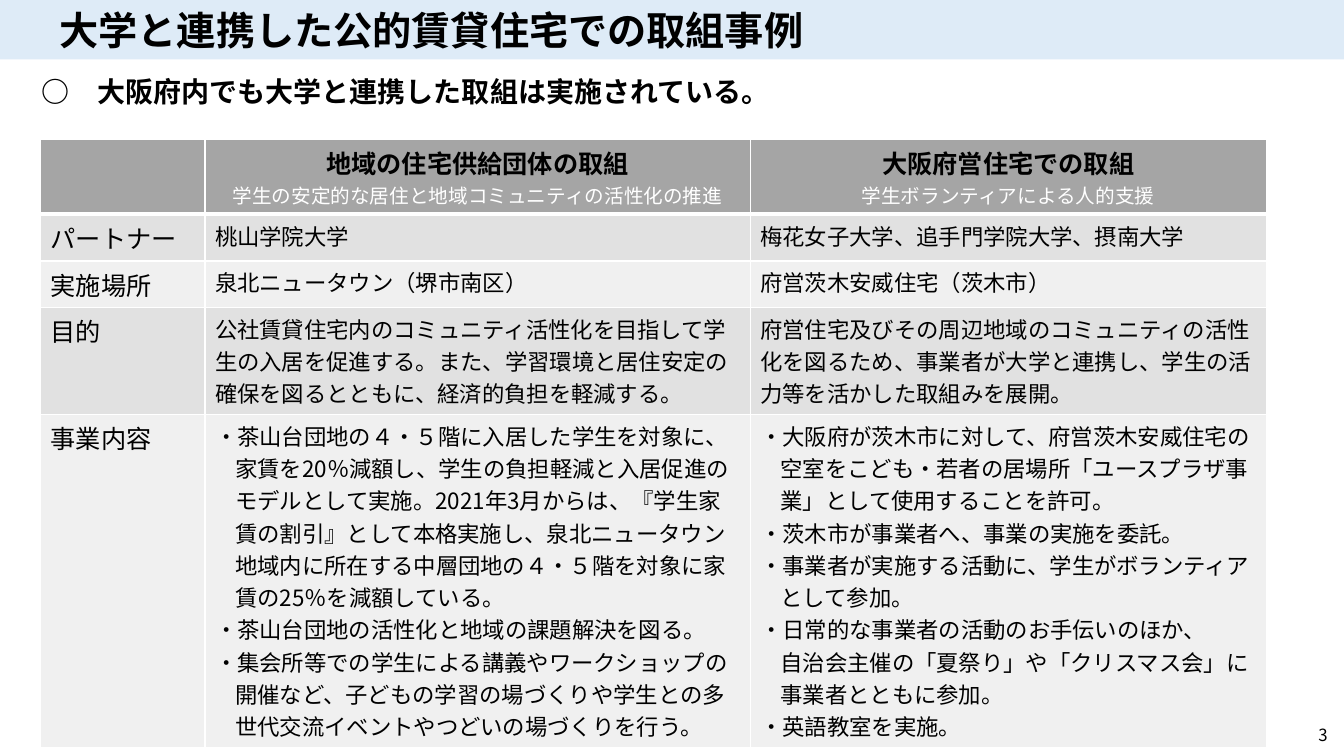
from lxml import etree
from pptx import Presentation
from pptx.dml.color import RGBColor
from pptx.enum.text import MSO_ANCHOR, MSO_AUTO_SIZE, PP_ALIGN
from pptx.oxml.ns import qn
from pptx.util import Pt

LEFT, MID, RIGHT, JUST = (PP_ALIGN.LEFT, PP_ALIGN.CENTER,
                          PP_ALIGN.RIGHT, PP_ALIGN.JUSTIFY)
TOP, CENTER = MSO_ANCHOR.TOP, MSO_ANCHOR.MIDDLE
FIXED = MSO_AUTO_SIZE.NONE

FONT = "Noto Sans CJK JP"
BLACK, WHITE, BLUE = "000000", "FFFFFF", "DEEBF7"
HEAD, DARK, LIGHT = "A5A5A5", "E1E1E1", "F0F0F0"

COLS = [117.4, 389.5, 368.6]
ROWS = [34.6, 29.5, 28.8, 61.2, 236.9]

HEADS = [
    ("地域の住宅供給団体の取組", "学生の安定的な居住と地域コミュニティの活性化の推進"),
    ("大阪府営住宅での取組", "学生ボランティアによる人的支援"),
]
FACTS = [
    ("パートナー", "桃山学院大学", "梅花女子大学、追手門学院大学、摂南大学"),
    ("実施場所", "泉北ニュータウン（堺市南区）", "府営茨木安威住宅（茨木市）"),
    ("目的",
     "公社賃貸住宅内のコミュニティ活性化を目指して学生の入居を促進する。"
     "また、学習環境と居住安定の確保を図るとともに、経済的負担を軽減する。",
     "府営住宅及びその周辺地域のコミュニティの活性化を図るため、"
     "事業者が大学と連携し、学生の活力等を活かした取組みを展開。"),
]
WORK = [
    ["・茶山台団地の４・５階に入居した学生を対象に、家賃を20％減額し、"
     "学生の負担軽減と入居促進のモデルとして実施。2021年3月からは、"
     "『学生家賃の割引』として本格実施し、泉北ニュータウン地域内に所在する"
     "中層団地の４・５階を対象に家賃の25％を減額している。",
     "・茶山台団地の活性化と地域の課題解決を図る。",
     "・集会所等での学生による講義やワークショップの開催など、"
     "子どもの学習の場づくりや学生との多世代交流イベントやつどいの場づくりを行う。"],
    ["・大阪府が茨木市に対して、府営茨木安威住宅の空室をこども・若者の居場所"
     "「ユースプラザ事業」として使用することを許可。",
     "・茨木市が事業者へ、事業の実施を委託。",
     "・事業者が実施する活動に、学生がボランティアとして参加。",
     "・日常的な事業者の活動のお手伝いのほか、",
     "自治会主催の「夏祭り」や「クリスマス会」に事業者とともに参加。",
     "・英語教室を実施。"],
]


def color(code):
    return RGBColor.from_string(code)


def paint(part, code):
    part.fill.solid()
    part.fill.fore_color.rgb = color(code)


def place(shape, box):
    shape.left, shape.top, shape.width, shape.height = map(Pt, box)


def setup(frame, pads, anchor):
    frame.word_wrap = True
    frame.auto_size = FIXED
    frame.vertical_anchor = anchor
    (frame.margin_left, frame.margin_top,
     frame.margin_right, frame.margin_bottom) = map(Pt, pads)


def write(para, text, size, code=BLACK, bold=False, align=LEFT, indent=None):
    para.alignment = align
    if indent:
        props = para._p.get_or_add_pPr()
        props.set("marL", str(Pt(indent[0])))
        props.set("indent", str(Pt(indent[1])))
    run = para.add_run()
    run.text = text
    font = run.font
    font.size, font.bold, font.name = Pt(size), bold, FONT
    font.color.rgb = color(code)
    east = etree.SubElement(run._r.get_or_add_rPr(), qn("a:ea"))
    east.set("typeface", FONT)


def border(cell, low):
    props = cell._tc.get_or_add_tcPr()
    for side, width in (("L", 1), ("R", 1), ("T", 1), ("B", low)):
        line = etree.SubElement(props, qn("a:ln" + side), w=str(Pt(width)))
        fill = etree.SubElement(line, qn("a:solidFill"))
        etree.SubElement(fill, qn("a:srgbClr"), val=WHITE)


def add_title(slide, box):
    title = slide.shapes.title
    place(title, box)
    paint(title, BLUE)
    setup(title.text_frame, (42.5, 0, 0, 0), CENTER)
    write(title.text_frame.paragraphs[0],
          "大学と連携した公的賃貸住宅での取組事例", 28, bold=True)


def add_lead(slide, box):
    body = slide.placeholders[1]
    place(body, box)
    setup(body.text_frame, (0, 8.6, 0, 0), TOP)
    para = body.text_frame.paragraphs[0]
    para.line_spacing, para.space_before = Pt(22), Pt(10)
    write(para, "○　大阪府内でも大学と連携した取組は実施されている。", 20,
          bold=True, align=JUST, indent=(20.9, -13.7))
    etree.SubElement(para._p.get_or_add_pPr(), qn("a:buNone"))


def add_grid(slide, box):
    table = slide.shapes.add_table(len(ROWS), len(COLS), *map(Pt, box)).table
    for col, width in zip(table.columns, COLS):
        col.width = Pt(width)
    for row, height in zip(table.rows, ROWS):
        row.height = Pt(height)

    # Borders and row shades
    for r, row in enumerate(table.rows):
        shade = HEAD if r == 0 else DARK if r % 2 else LIGHT
        for cell in row.cells:
            border(cell, 1 if r else 3)
            paint(cell, shade)

    # Column heads
    for c, (name, note) in enumerate(HEADS, 1):
        frame = table.cell(0, c).text_frame
        write(frame.paragraphs[0], name, 18, bold=True, align=MID)
        write(frame.add_paragraph(), note, 14, WHITE, align=MID)

    # Short facts
    for r, texts in enumerate(FACTS, 1):
        for c, text in enumerate(texts):
            para = table.cell(r, c).text_frame.paragraphs[0]
            write(para, text, 16 if c else 18)

    # Details of the work
    last = len(ROWS) - 1
    write(table.cell(last, 0).text_frame.paragraphs[0], "事業内容", 18)
    for c, items in enumerate(WORK, 1):
        frame = table.cell(last, c).text_frame
        for i, text in enumerate(items):
            para = frame.add_paragraph() if i else frame.paragraphs[0]
            hang = -14.4 if text.startswith("・") else 0
            write(para, text, 16, indent=(14.4, hang))


def add_number(slide, box):
    frame = slide.shapes.add_textbox(*map(Pt, box)).text_frame
    setup(frame, (7.2, 3.6, 7.2, 3.6), CENTER)
    write(frame.paragraphs[0], "3", 12, align=RIGHT)


def main():
    deck = Presentation()
    deck.slide_width, deck.slide_height = Pt(960), Pt(540)
    slide = deck.slides.add_slide(deck.slide_layouts[1])
    add_title(slide, (0, 0, 960, 42.5))
    add_number(slide, (787.7, 510.5, 167.8, 28.8))
    add_grid(slide, (29, 99.4, sum(COLS), sum(ROWS)))
    add_lead(slide, (22.3, 46.8, 915, 49))
    deck.save("out.pptx")


if __name__ == "__main__":
    main()
